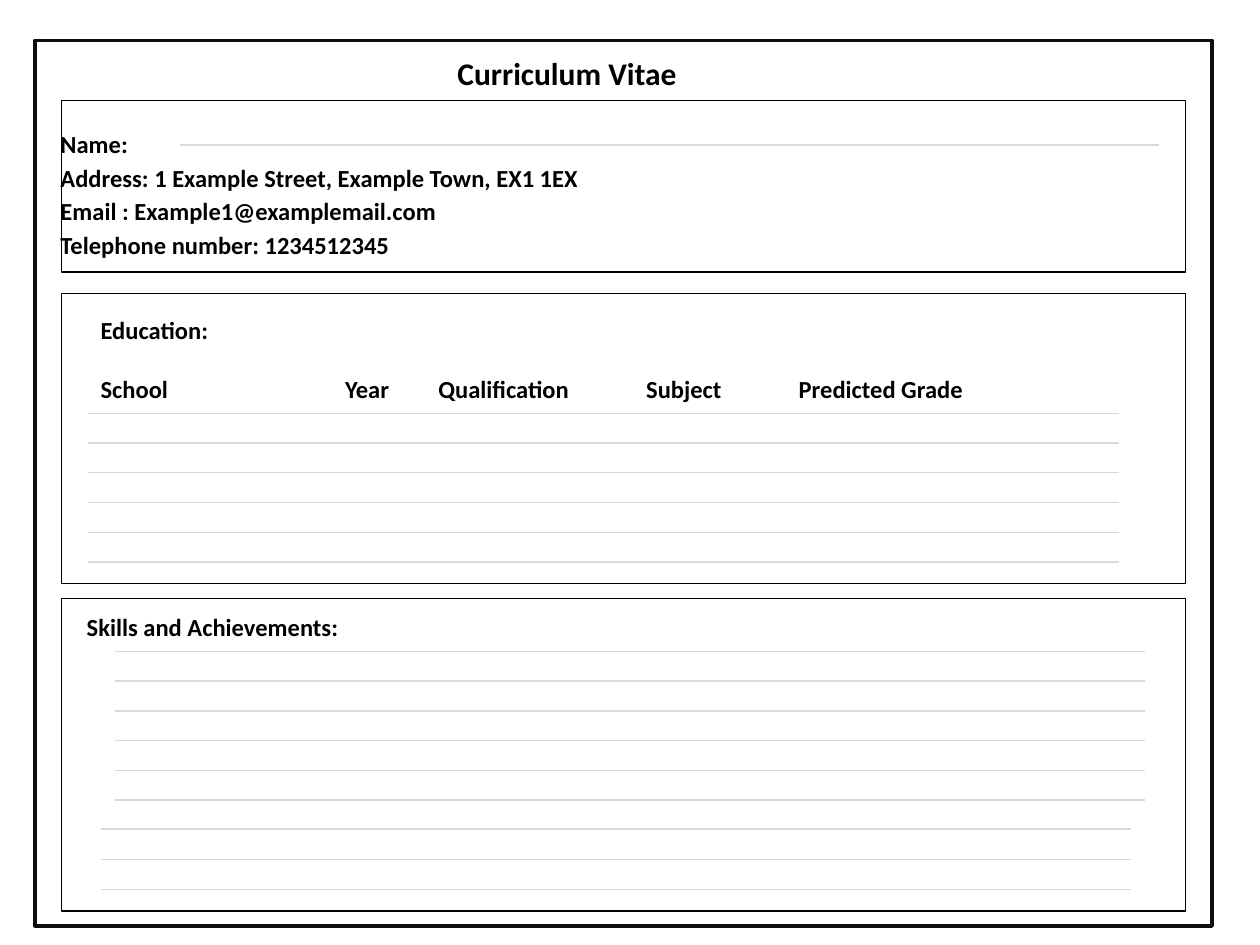
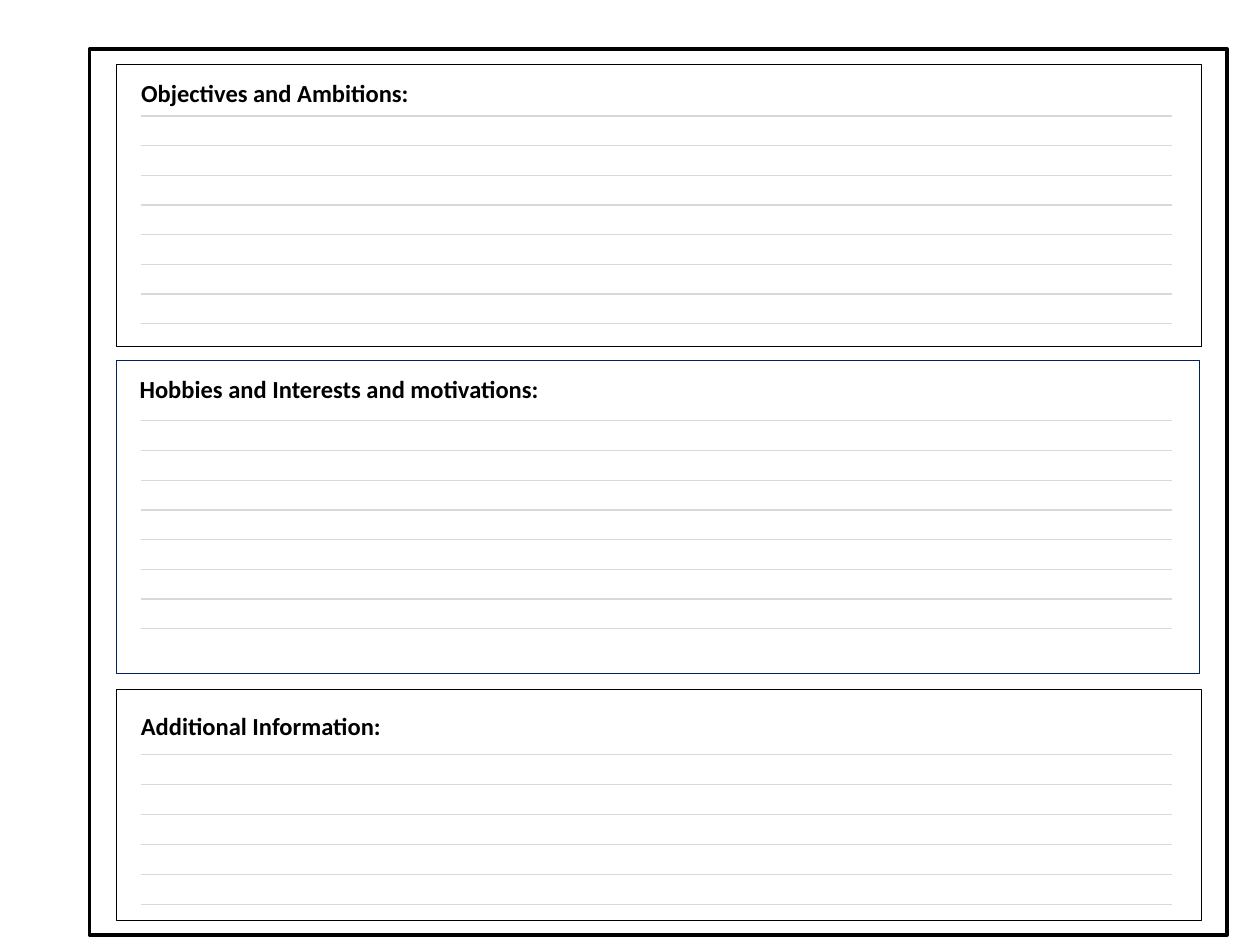
from dataclasses import dataclass

from lxml import etree
from pptx import Presentation
from pptx import util as u
from pptx.dml.color import RGBColor
from pptx.enum import shapes, text
from pptx.oxml.ns import qn

BLACK = RGBColor(0x00, 0x00, 0x00)
FRAME_GREY = RGBColor(0x0D, 0x0D, 0x0D)
NAVY = RGBColor(0x00, 0x20, 0x60)
RULE_GREY = RGBColor(0xD9, 0xD9, 0xD9)
FONT = "Calibri"
TITLE_SIZE = 18
TEXT_SIZE = 14
RULE_WIDTH = 8.18
RECTANGLE = shapes.MSO_SHAPE.RECTANGLE
PROCESS = shapes.MSO_SHAPE.FLOWCHART_PROCESS


@dataclass(frozen=True)
class Box:
    left: float
    top: float
    width: float
    height: float


@dataclass(frozen=True)
class Panel:
    box: Box
    weight: float
    color: RGBColor = BLACK


@dataclass(frozen=True)
class Rules:
    left: float
    first: float
    last: float
    count: int
    width: float = RULE_WIDTH


CV_PANELS = [
    Panel(Box(0.28, 0.32, 9.34, 7.03), 2, FRAME_GREY),
    Panel(Box(0.49, 0.8, 8.92, 1.36), 0.75),
    Panel(Box(0.49, 2.33, 8.92, 2.3), 0.75),
    Panel(Box(0.49, 4.75, 8.92, 2.48), 0.75),
]
CV_RULES = [
    Rules(1.43, 1.15, 1.15, 1, 7.77),
    Rules(0.7, 3.28, 4.46, 6),
    Rules(0.91, 5.17, 6.35, 6),
    Rules(0.8, 6.58, 7.06, 3),
]
CONTACT_LINES = [
    "Name:",
    "Address: 1 Example Street, Example Town, EX1 1EX",
    "Email : Example1@examplemail.com",
    "Telephone number: 1234512345",
]
EDUCATION_COLUMNS = ["School", "Year", "Qualification", "Subject", "Predicted Grade"]
EDUCATION_TABS = [1.94, 2.68, 4.33, 5.54]

STATEMENT_PANELS = [
    Panel(Box(0.71, 0.39, 9.03, 7.03), 2),
    Panel(Box(0.92, 0.51, 8.61, 2.24), 0.25),
    Panel(Box(0.92, 2.86, 8.6, 2.48), 0.25, NAVY),
    Panel(Box(0.92, 5.47, 8.61, 1.83), 0.25),
]
STATEMENT_RULES = [
    Rules(1.12, 0.92, 2.57, 8),
    Rules(1.12, 3.34, 4.99, 8),
    Rules(1.12, 5.99, 7.18, 6),
]


def place(holder, box: Box) -> None:
    holder.left, holder.top = u.Inches(box.left), u.Inches(box.top)
    holder.width, holder.height = u.Inches(box.width), u.Inches(box.height)
    frame = holder.text_frame
    frame.word_wrap = True
    frame.auto_size = text.MSO_AUTO_SIZE.NONE
    frame.vertical_anchor = text.MSO_ANCHOR.TOP


def write(paragraph, words: str, size: float = TEXT_SIZE) -> None:
    paragraph.alignment = text.PP_ALIGN.LEFT
    run = paragraph.add_run()
    run.text = words
    run.font.name = FONT
    run.font.size = u.Pt(size)
    run.font.bold = True
    run.font.color.rgb = BLACK


def add_heading(slide, words: str, box: Box):
    heading = slide.shapes.add_textbox(0, 0, 0, 0)
    place(heading, box)
    write(heading.text_frame.paragraphs[0], words)
    return heading


def set_title(slide, words: str, box: Box, size: float) -> None:
    place(slide.shapes.title, box)
    write(slide.shapes.title.text_frame.paragraphs[0], words, size)


def draw_panel(slide, panel: Panel, outline: shapes.MSO_SHAPE) -> None:
    box = panel.box
    border = slide.shapes.add_shape(
        outline, u.Inches(box.left), u.Inches(box.top), u.Inches(box.width), u.Inches(box.height)
    )
    border.shadow.inherit = False
    border.fill.background()
    border.line.color.rgb = panel.color
    border.line.width = u.Pt(panel.weight)


def draw_rules(slide, rules: Rules) -> None:
    pitch = (rules.last - rules.first) / max(rules.count - 1, 1)
    for row in range(rules.count):
        y = u.Inches(rules.first + row * pitch)
        rule = slide.shapes.add_connector(
            shapes.MSO_CONNECTOR.STRAIGHT,
            u.Inches(rules.left), y, u.Inches(rules.left + rules.width), y,
        )
        rule.line.color.rgb = RULE_GREY
        rule.line.width = u.Pt(0.75)
        etree.SubElement(rule._element.spPr, qn("a:effectLst"))


def draw_form(slide, panels: list[Panel], rule_groups: list[Rules], outline: shapes.MSO_SHAPE) -> None:
    for panel in panels:
        draw_panel(slide, panel, outline)
    for rules in rule_groups:
        draw_rules(slide, rules)


def fill_contact(contact) -> None:
    place(contact, Box(0.38, 0.97, 9, 1.2))
    frame = contact.text_frame
    for index, line in enumerate(CONTACT_LINES):
        paragraph = frame.add_paragraph() if index else frame.paragraphs[0]
        write(paragraph, line)
        paragraph.space_before = u.Pt(2.6 if index else 0)
        properties = paragraph._p.get_or_add_pPr()
        properties.set("marL", str(u.Inches(0.38)))
        properties.set("indent", str(u.Inches(-0.38)))
        etree.SubElement(properties, qn("a:buNone"))


def add_education(slide) -> None:
    education = add_heading(slide, "Education:", Box(0.7, 2.45, 8.71, 0.81))
    columns = education.text_frame.add_paragraph()
    columns.space_before = u.Pt(17)
    write(columns, "\t".join(EDUCATION_COLUMNS))
    tabs = etree.SubElement(columns._p.get_or_add_pPr(), qn("a:tabLst"))
    for position in EDUCATION_TABS:
        etree.SubElement(tabs, qn("a:tab"), pos=str(u.Inches(position)), algn="l")


def build_cv(deck) -> None:
    slide = deck.slides.add_slide(deck.slide_layouts[1])
    set_title(slide, "Curriculum Vitae", Box(3.53, 0.38, 2.62, 0.4), TITLE_SIZE)
    fill_contact(slide.placeholders[1])
    draw_form(slide, CV_PANELS, CV_RULES, RECTANGLE)
    add_education(slide)
    add_heading(slide, "Skills and Achievements:", Box(0.59, 4.81, 3.46, 0.34))


def build_statements(deck) -> None:
    slide = deck.slides.add_slide(deck.slide_layouts[5])
    set_title(slide, "Objectives and Ambitions:", Box(1.02, 0.57, 3.99, 0.34), TEXT_SIZE)
    draw_form(slide, STATEMENT_PANELS, STATEMENT_RULES, PROCESS)
    add_heading(slide, "Hobbies and Interests and motivations:", Box(1.01, 2.92, 3.6, 0.34))
    add_heading(slide, "Additional Information:", Box(1.02, 5.59, 2.4, 0.34))


def main() -> None:
    deck = Presentation()
    deck.slide_width, deck.slide_height = u.Inches(10), u.Inches(7.5)
    build_cv(deck)
    build_statements(deck)
    deck.save("out.pptx")


if __name__ == "__main__":
    main()
